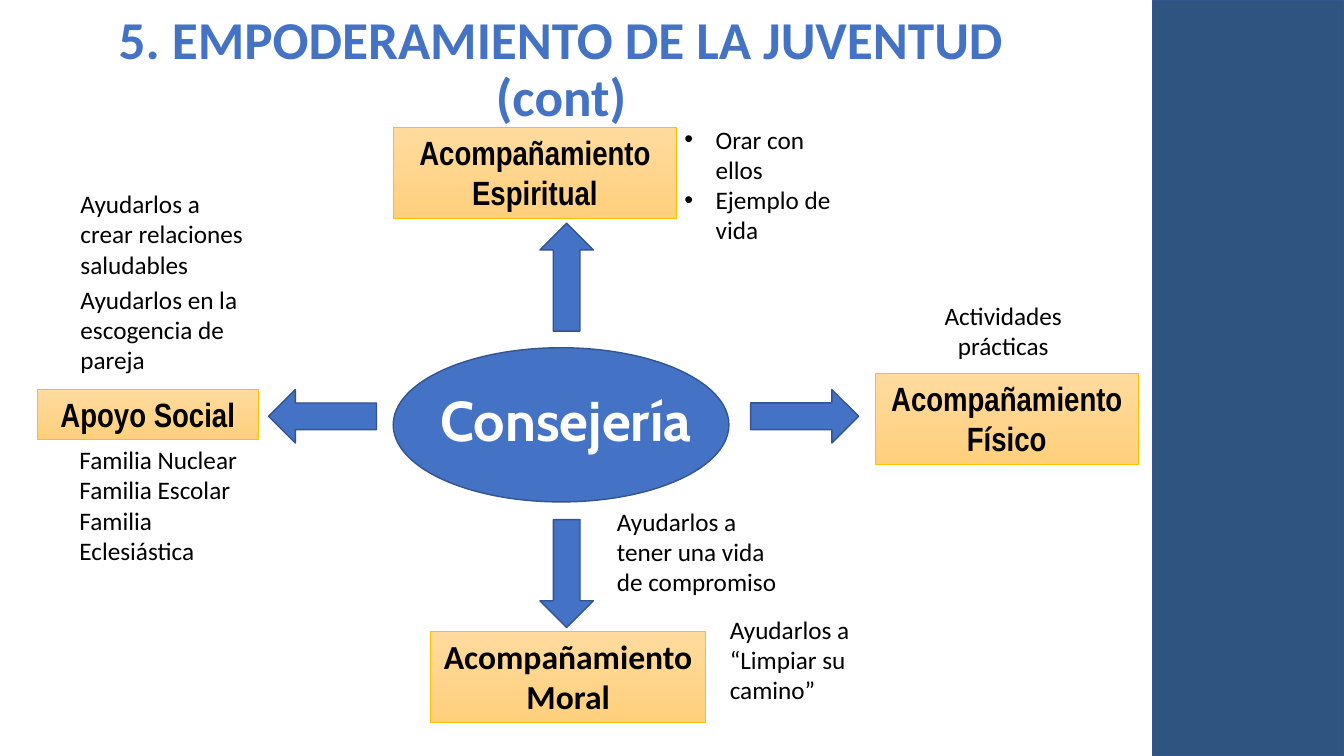
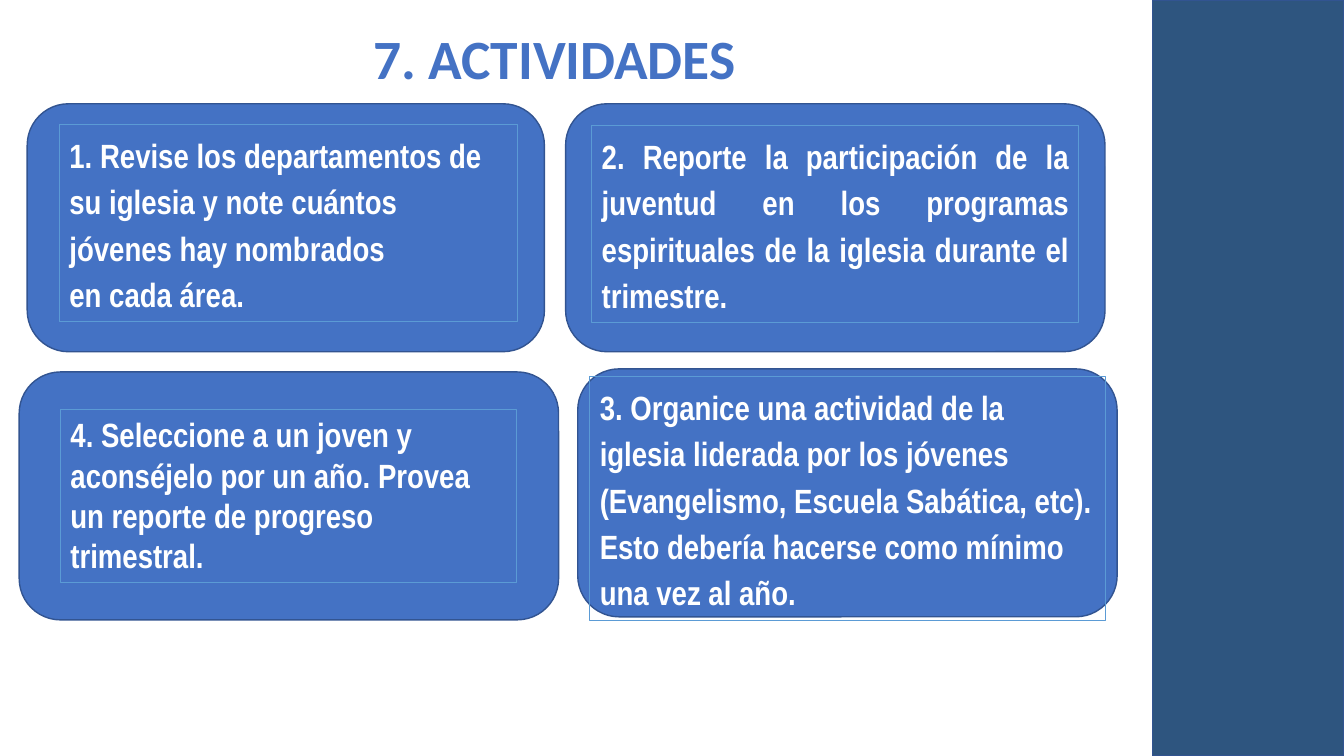
"""Builds two slides on youth empowerment: a counselling diagram and four activities."""
from dataclasses import dataclass

from lxml import etree
from pptx import Presentation
from pptx import util as u
from pptx.dml.color import RGBColor
from pptx.enum import shapes, text
from pptx.oxml import ns

LEFT, CENTER, JUSTIFY = text.PP_ALIGN.LEFT, text.PP_ALIGN.CENTER, text.PP_ALIGN.JUSTIFY
SHAPE = shapes.MSO_SHAPE


@dataclass(frozen=True)
class Theme:
    """Colours, fonts and type sizes of the presentation."""
    blue: str = "4472C4"
    outline: str = "325491"
    band: str = "2E557F"
    amber_top: str = "FFDB9E"
    amber_bottom: str = "FFD07C"
    amber_line: str = "FFC000"
    frame: str = "5B9BD5"
    white: str = "FFFFFF"
    black: str = "000000"
    body_font: str = "Calibri"
    label_font: str = "Arial Narrow"
    center_font: str = "Cabin"
    center_size: float = 40
    label_size: float = 24
    note_size: float = 18


class Deck:
    """Holds the theme and the current slide, and draws each kind of element."""

    def __init__(self, theme):
        """Start an empty widescreen presentation."""
        self.theme = theme
        self.presentation = Presentation()
        self.presentation.slide_width = u.Inches(13.33)
        self.presentation.slide_height = u.Inches(7.5)
        self.slide = None

    def add_slide(self, title, box, size, align):
        """Add a slide with the side band and its title."""
        self.slide = self.presentation.slides.add_slide(self.presentation.slide_layouts[5])
        self.shape(SHAPE.RECTANGLE, (11.43, 0, 1.9, 7.5), self.theme.band)
        holder = self.slide.shapes.title
        holder.left, holder.top, holder.width, holder.height = map(u.Inches, box)
        self.set_text(holder, [title], self.theme.body_font, size, self.theme.blue,
                      bold=True, align=align, spacing=0.9)
        holder.text_frame.vertical_anchor = text.MSO_ANCHOR.MIDDLE

    def shape(self, kind, box, fill=None, line=None, weight=1, rotation=0):
        """Draw a preset shape, unfilled when no fill is given."""
        shape = self.slide.shapes.add_shape(kind, *map(u.Inches, box))
        shape.shadow.inherit = False
        shape.rotation = rotation
        if fill:
            shape.fill.solid()
            shape.fill.fore_color.rgb = RGBColor.from_string(fill)
        else:
            shape.fill.background()
        shape.line.color.rgb = RGBColor.from_string(line or self.theme.outline)
        shape.line.width = u.Pt(weight)
        return shape

    def set_text(self, shape, lines, font, size, color, bold=False, align=LEFT,
                 spacing=None, bullets=False):
        """Fill a shape with one paragraph for each line."""
        frame = shape.text_frame
        frame.word_wrap = True
        frame.auto_size = text.MSO_AUTO_SIZE.NONE
        frame.vertical_anchor = text.MSO_ANCHOR.TOP
        for index, line in enumerate(lines):
            paragraph = frame.add_paragraph() if index else frame.paragraphs[0]
            paragraph.alignment = align
            if spacing:
                paragraph.line_spacing = spacing
            if bullets:
                self.bullet(paragraph)
            run = paragraph.add_run()
            run.text = line
            run.font.name = font
            run.font.size = u.Pt(size)
            run.font.bold = bold
            run.font.color.rgb = RGBColor.from_string(color)
        return frame

    def bullet(self, paragraph):
        """Give a paragraph a hanging round bullet."""
        properties = paragraph._p.get_or_add_pPr()
        indent = u.Inches(0.31)
        properties.set("marL", str(indent))
        properties.set("indent", str(-indent))
        etree.SubElement(properties, ns.qn("a:buFont"), typeface="Arial")
        etree.SubElement(properties, ns.qn("a:buChar"), char="•")

    def hub(self, label, box, label_box):
        """Draw the central ellipse and its label."""
        self.shape(SHAPE.OVAL, box, self.theme.blue)
        holder = self.slide.shapes.add_textbox(*map(u.Inches, label_box))
        self.set_text(holder, [label], self.theme.center_font, self.theme.center_size,
                      self.theme.white, bold=True)

    def arrow(self, center_x, center_y, rotation):
        """Draw a block arrow around its centre."""
        width, height = 0.53, 1.07
        box = (center_x - width / 2, center_y - height / 2, width, height)
        self.shape(SHAPE.UP_ARROW, box, self.theme.blue, rotation=rotation)

    def label(self, label, box, font=None):
        """Draw an amber label box."""
        shape = self.shape(SHAPE.RECTANGLE, box, line=self.theme.amber_line, weight=0.5)
        shape.fill.gradient()
        shape.fill.gradient_angle = 270
        colors = (self.theme.amber_top, self.theme.amber_bottom)
        for stop, color in zip(shape.fill.gradient_stops, colors):
            stop.color.rgb = RGBColor.from_string(color)
        self.set_text(shape, [label], font or self.theme.label_font, self.theme.label_size,
                      self.theme.black, bold=True, align=CENTER)

    def note(self, lines, box, align=LEFT, bullets=False):
        """Draw a plain note."""
        holder = self.slide.shapes.add_textbox(*map(u.Inches, box))
        self.set_text(holder, lines, self.theme.body_font, self.theme.note_size,
                      self.theme.black, align=align, bullets=bullets)

    def card(self, box):
        """Draw a rounded blue card."""
        self.shape(SHAPE.FLOWCHART_ALTERNATE_PROCESS, box, self.theme.blue)

    def activity(self, lines, box, align=LEFT, spacing=1.15):
        """Draw a thinly framed activity text."""
        shape = self.shape(SHAPE.RECTANGLE, box, line=self.theme.frame, weight=0.5)
        return self.set_text(shape, lines, self.theme.label_font, self.theme.label_size,
                             self.theme.white, bold=True, align=align, spacing=spacing)


def build_counselling(deck):
    """Build the diagram of the four kinds of support."""
    deck.add_slide("5. EMPODERAMIENTO DE LA JUVENTUD (cont)", (0.52, 0.26, 10.09, 0.89), 38, CENTER)
    deck.hub("Consejería", (3.9, 3.45, 3.33, 1.53), (4.27, 3.78, 2.83, 0.77))
    for center_x, center_y, rotation in ((5.62, 2.75, 0), (7.98, 4.13, 90),
                                         (5.62, 5.69, 180), (3.2, 4.13, 270)):
        deck.arrow(center_x, center_y, rotation)

    deck.label("Acompañamiento Espiritual", (3.9, 1.26, 2.81, 0.91))
    deck.label("Acompañamiento Físico", (8.68, 3.7, 2.61, 0.91))
    deck.label("Apoyo Social", (0.37, 3.86, 2.19, 0.5))
    deck.label("Acompañamiento Moral", (4.27, 6.26, 2.73, 0.91), deck.theme.body_font)

    deck.note(["Orar con ellos", "Ejemplo de vida"], (6.69, 1.18, 1.84, 1.62), bullets=True)
    deck.note(["Actividades prácticas"], (9.18, 2.93, 1.54, 0.71), CENTER)
    for line, left, top in (("Ayudarlos a “Limpiar su camino”", 7.14, 6.04),
                            ("Ayudarlos a tener una vida de compromiso", 6.02, 4.97),
                            ("Ayudarlos a crear relaciones saludables", 0.7, 1.82),
                            ("Ayudarlos en la escogencia de pareja", 0.7, 2.77)):
        deck.note([line], (left, top, 1.86, 1.01))
    deck.note(["Familia Nuclear", "Familia Escolar", "Familia Eclesiástica"],
              (0.69, 4.36, 1.86, 1.62))


def build_activities(deck):
    """Build the four activity cards."""
    deck.add_slide("7. ACTIVIDADES", (3.6, 0.19, 4.69, 0.84), 39.6, LEFT)
    for left, top, width in ((5.73, 3.66, 5.35), (0.19, 3.69, 5.35),
                             (5.61, 1.03, 5.35), (0.27, 1.03, 5.13)):
        deck.card((left, top, width, 2.46))

    first = deck.activity(["1. Revise los departamentos de su iglesia y note cuántos jóvenes "
                           "hay nombrados", "en cada área."], (0.59, 1.23, 4.54, 1.96))
    first.paragraphs[1].alignment = JUSTIFY
    deck.activity(["2. Reporte la participación de la juventud en los programas espirituales "
                   "de la iglesia durante el trimestre."], (5.87, 1.24, 4.83, 1.96), JUSTIFY)
    deck.activity(["3. Organice una actividad de la iglesia liderada por los jóvenes "
                   "(Evangelismo, Escuela Sabática, etc). Esto debería hacerse como mínimo "
                   "una vez al año."], (5.85, 3.73, 5.11, 2.42))
    deck.activity(["4. Seleccione a un joven y aconséjelo por un año. Provea un reporte de "
                   "progreso trimestral."], (0.6, 4.06, 4.52, 1.72), spacing=None)


def main():
    """Build and save the presentation."""
    deck = Deck(Theme())
    build_counselling(deck)
    build_activities(deck)
    deck.presentation.save("out.pptx")


if __name__ == "__main__":
    main()
